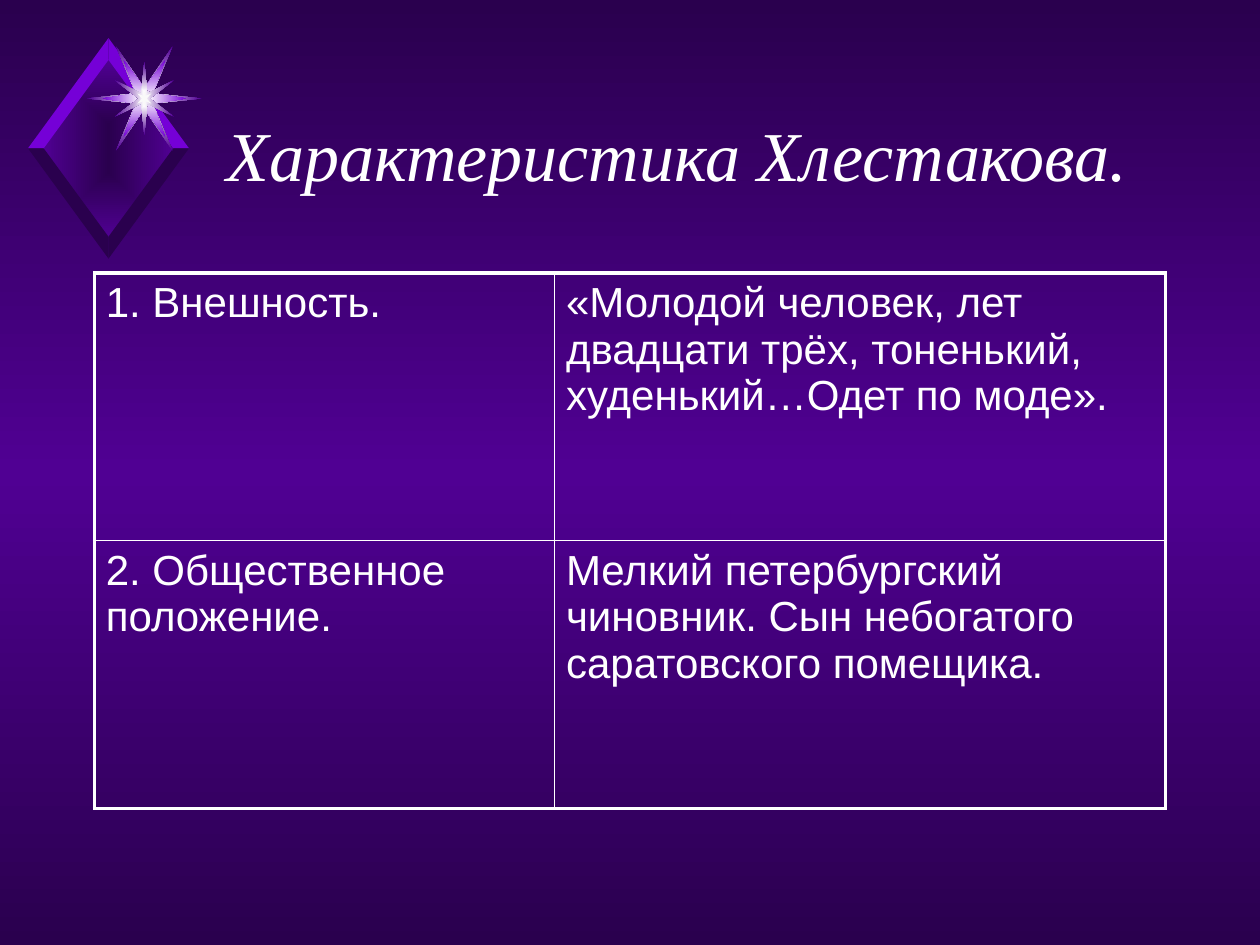
from lxml.etree import SubElement
from pptx import Presentation
from pptx.dml.color import RGBColor
from pptx.enum.text import MSO_ANCHOR, PP_ALIGN
from pptx.oxml import parse_xml
from pptx.oxml.ns import nsdecls, qn
from pptx.util import Pt


def paint(fill, hue):
    fill.solid()
    fill.fore_color.rgb = RGBColor.from_string(hue)


def draw(dots, hues):
    dots = [(Pt(x), Pt(y)) for x, y in dots]
    pen = slide.shapes.build_freeform(*dots[0])
    pen.add_line_segments(dots[1:])
    shape = pen.convert_to_shape()
    shape.shadow.inherit = False
    shape.line.fill.background()
    if len(hues) == 1:
        paint(shape.fill, hues[0])
        return
    shape.fill.gradient()
    for stop, hue in zip(shape.fill.gradient_stops, hues):
        stop.color.rgb = RGBColor.from_string(hue)
    grad = shape.element.spPr.find(qn("a:gradFill"))
    for stop, pos in zip(grad.iter(qn("a:gs")), (0, 100000)):
        stop.set("pos", str(pos))
    grad.remove(grad.find(qn("a:lin")))
    path = SubElement(grad, qn("a:path"), path="rect")
    SubElement(path, qn("a:fillToRect"), l="50000", t="50000", r="50000", b="50000")


dark, mid, light, white = "2A004E", "500093", "7500D7", "FFFFFF"
deck = Presentation()
deck.slide_width, deck.slide_height = Pt(720), Pt(540)
slide = deck.slides.add_slide(deck.slide_layouts[6])

slide.background.fill.gradient()
grad = next(slide.element.iter(qn("a:gradFill")))
stops = "".join(
    f'<a:gs pos="{pos}"><a:srgbClr val="{hue}"/></a:gs>'
    for pos, hue in ((0, dark), (50000, mid), (100000, dark))
)
grad.getparent().replace(grad, parse_xml(
    f'<a:gradFill {nsdecls("a")} rotWithShape="1"><a:gsLst>{stops}</a:gsLst>'
    '<a:lin ang="5400000" scaled="0"/></a:gradFill>'
))

left, top = 62, 84.75
draw([(left, top - 51), (left - 37.5, top), (left, top + 51), (left + 37.5, top)], [dark, mid])
for down, hue in ((-1, light), (1, dark)):
    for side in (1, -1):
        edge = [(0, 50.5), (0, 63), (46, 0), (37, 0)]
        draw([(left + side * x, top + down * y) for x, y in edge], [hue])

stars = [
    ([(32.8, 0), (4.8, 2.9), (16.2, 29.9), (0, 5.8)], [white, mid]),
    ([(24, 0), (4.8, 2.9), (11.9, 22), (0, 5.8)], [white, light]),
    ([(3.2, 0), (16.9, 10.4), (1.7, 2.9), (0, 21)], [white, mid]),
    ([(1.4, 0), (4, 2.9), (0.7, 1.6), (0, 5)], ["F9F9F9"]),
]
for arc, hues in stars:
    half = arc + [(-x, y) for x, y in arc[-2::-1]]
    ring = half + [(x, -y) for x, y in half[-2:0:-1]]
    draw([(82.5 + x, 56.3 - y) for x, y in ring], hues)

title = slide.shapes.add_textbox(Pt(108), Pt(37.5), Pt(558), Pt(100.5))
frame = title.text_frame
frame.word_wrap = True
frame.vertical_anchor = MSO_ANCHOR.MIDDLE
line = frame.paragraphs[0]
line.text = "Характеристика Хлестакова."
line.alignment = PP_ALIGN.CENTER
line.font.name, line.font.size, line.font.italic = "Times New Roman", Pt(40), True
paint(line.font.fill, white)

rows = [
    ("1. Внешность.", "«Молодой человек, лет двадцати трёх, тоненький, худенький…Одет по моде»."),
    ("2. Общественное положение.", "Мелкий петербургский чиновник. Сын небогатого саратовского помещика."),
]
table = slide.shapes.add_table(2, 2, Pt(54), Pt(156), Pt(612), Pt(306)).table
table.first_row = table.horz_banding = False
table.columns[0].width, table.columns[1].width = Pt(263), Pt(349)
for r, row in enumerate(rows):
    for c, text in enumerate(row):
        cell = table.cell(r, c)
        cell.text = text
        cell.margin_left = cell.margin_right = Pt(6.5)
        cell.fill.background()
        font = cell.text_frame.paragraphs[0].font
        font.name, font.size = "Arial", Pt(24)
        paint(font.fill, white)
        outer = {"L": c == 0, "R": c == 1, "T": r == 0, "B": r == 1}
        for spot, (side, thick) in enumerate(outer.items()):
            width = Pt(2.25 if thick else 1)
            cell._tc.tcPr.insert(spot, parse_xml(
                f'<a:ln{side} {nsdecls("a")} w="{width}"><a:solidFill>'
                f'<a:srgbClr val="{white}"/></a:solidFill></a:ln{side}>'
            ))

deck.save("out.pptx")
